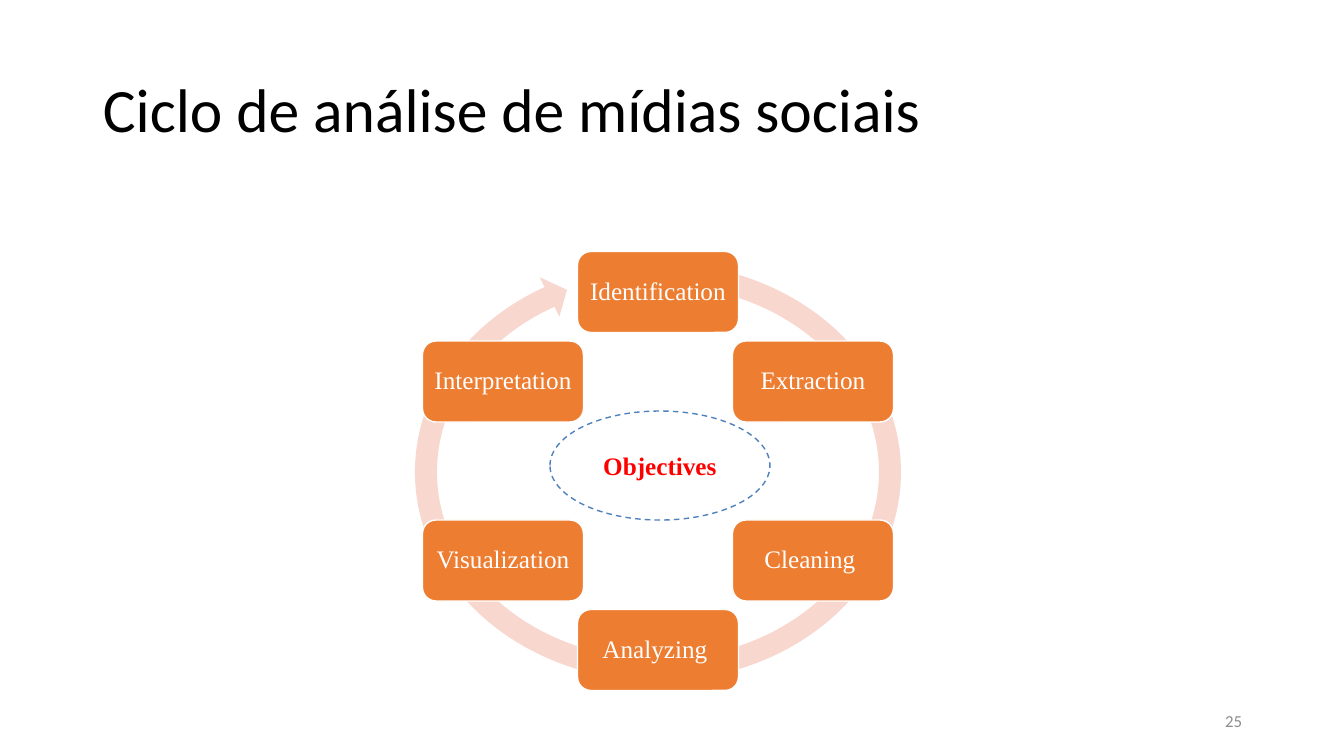
"""Build the slide on the social media analysis cycle."""
import math

import pptx
import pptx.util
import pptx.dml.color
import pptx.enum.dml
import pptx.enum.shapes
import pptx.enum.text

TITLE = "Ciclo de análise de mídias sociais"
PAGE_NUMBER = "25"
GOAL = "Objectives"
STAGES = ["Identification", "Extraction", "Cleaning ", "Analyzing ", "Visualization", "Interpretation "]

COLORS = {
    "title": "000000",
    "page": "8C8C8C",
    "stage": "ED7D31",
    "white": "FFFFFF",
    "ring": "F8D7CE",
    "goal_line": "4F81BD",
    "goal_text": "FF0000",
}
SANS, SERIF = "Calibri", "Times New Roman"

PX = 914400 / 100.8
SLIDE_SIZE = (1344, 756)
TITLE_BOX = (93, 40, 1159, 146)
PAGE_BOX = (950, 701, 302, 40)
RING_BOX = (404, 252, 508, 440)
RING_ADJUSTMENTS = (0.05, 3.13, 142.94, 170.89, 0.05)
GOAL_BOX = (550, 411, 220, 109)
CYCLE_CENTER = (658, 471)
CYCLE_RADIUS = 179
STAGE_SIZE = (161, 81)
STAGE_INSET = 7

ALIGN = pptx.enum.text.PP_ALIGN
SHAPE = pptx.enum.shapes.MSO_SHAPE


def px(length):
    return pptx.util.Emu(round(length * PX))


def rgb(name):
    return pptx.dml.color.RGBColor.from_string(COLORS[name])


def write(holder, text, font, size, color, align, spacing=1.0, bold=False):
    frame = holder.text_frame
    frame.word_wrap = True
    frame.vertical_anchor = pptx.enum.text.MSO_ANCHOR.MIDDLE
    paragraph = frame.paragraphs[0]
    paragraph.text = text
    paragraph.alignment = align
    paragraph.line_spacing = spacing
    paragraph.font.name = font
    paragraph.font.size = pptx.util.Pt(size)
    paragraph.font.bold = bold
    paragraph.font.color.rgb = rgb(color)
    return frame


def add_shape(slide, kind, box, fill, line=None):
    shape = slide.shapes.add_shape(kind, *map(px, box))
    shape.shadow.inherit = False
    shape.fill.solid()
    shape.fill.fore_color.rgb = rgb(fill)
    if line:
        shape.line.color.rgb = rgb(line)
        shape.line.width = pptx.util.Pt(1)
    else:
        shape.line.fill.background()
    return shape


def add_stage(slide, index, label):
    angle = 2 * math.pi * index / len(STAGES)
    width, height = STAGE_SIZE
    left = CYCLE_CENTER[0] + CYCLE_RADIUS * math.sin(angle) - width / 2
    top = CYCLE_CENTER[1] - CYCLE_RADIUS * math.cos(angle) - height / 2
    stage = add_shape(slide, SHAPE.ROUNDED_RECTANGLE, (left, top, width, height), "stage", "white")
    frame = write(stage, label, SERIF, 18, "white", ALIGN.CENTER, 0.9)
    frame.margin_left = frame.margin_right = px(STAGE_INSET)
    frame.margin_top = frame.margin_bottom = px(STAGE_INSET)


def main():
    deck = pptx.Presentation()
    deck.slide_width, deck.slide_height = map(px, SLIDE_SIZE)
    slide = deck.slides.add_slide(deck.slide_layouts[6])

    page = slide.shapes.add_textbox(*map(px, PAGE_BOX))
    write(page, PAGE_NUMBER, SANS, 12, "page", ALIGN.RIGHT)
    title = slide.shapes.add_textbox(*map(px, TITLE_BOX))
    write(title, TITLE, SANS, 44, "title", ALIGN.LEFT, 0.9)

    ring = add_shape(slide, SHAPE.CIRCULAR_ARROW, RING_BOX, "ring")
    for index, value in enumerate(RING_ADJUSTMENTS):
        ring.adjustments[index] = value
    for index, label in enumerate(STAGES):
        add_stage(slide, index, label)

    goal = add_shape(slide, SHAPE.OVAL, GOAL_BOX, "white", "goal_line")
    goal.line.dash_style = pptx.enum.dml.MSO_LINE.DASH
    frame = write(goal, GOAL, SERIF, 18, "goal_text", ALIGN.CENTER, bold=True)
    frame.paragraphs[0].space_after = pptx.util.Pt(10)

    deck.save("out.pptx")


if __name__ == "__main__":
    main()
